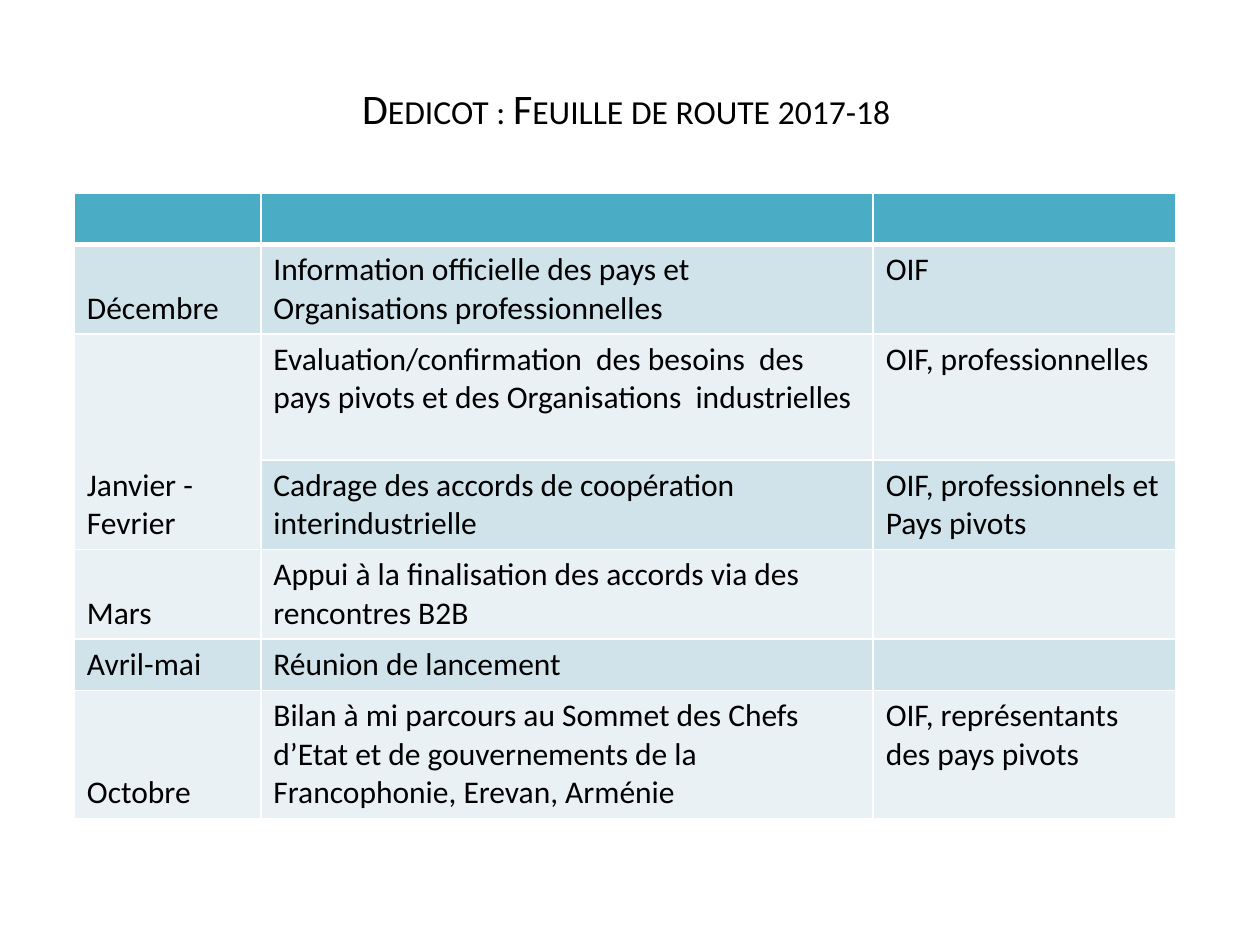
from pptx import Presentation
from pptx.dml.color import RGBColor
from pptx.enum.text import MSO_ANCHOR, PP_ALIGN
from pptx.oxml import parse_xml
from pptx.oxml.ns import nsdecls
from pptx.util import Inches, Pt

BLACK = RGBColor(0x00, 0x00, 0x00)
WHITE = RGBColor(0xFF, 0xFF, 0xFF)
TEAL = RGBColor(0x4B, 0xAC, 0xC6)
BAND_DARK = RGBColor(0xD0, 0xE3, 0xEA)
BAND_LIGHT = RGBColor(0xE9, 0xF1, 0xF5)
FONT = "Calibri"
BOTTOM, TOP = MSO_ANCHOR.BOTTOM, MSO_ANCHOR.TOP
CENTER = PP_ALIGN.CENTER

TITLE = "Dedicot : Feuille de route 2017-18"
COLUMN_WIDTHS = [1.48, 4.86, 2.4]
ROW_HEIGHTS = [0.41, 0.7, 1, 0.7, 0.7, 0.41, 1]
MERGED_ROWS = (2, 3)
ROADMAP = [
    ("", "", ""),
    ("Décembre", "Information officielle des pays et Organisations professionnelles", "OIF"),
    ("Janvier - Fevrier",
     "Evaluation/confirmation  des besoins  des pays pivots et des Organisations  industrielles",
     "OIF, professionnelles"),
    ("", "Cadrage des accords de coopération interindustrielle",
     "OIF, professionnels et Pays pivots"),
    ("Mars", "Appui à la finalisation des accords via des rencontres B2B", ""),
    ("Avril-mai", "Réunion de lancement", ""),
    ("Octobre",
     "Bilan à mi parcours au Sommet des Chefs d’Etat et de gouvernements de la "
     "Francophonie, Erevan, Arménie",
     "OIF, représentants des pays pivots"),
]


def style_font(font, size):
    font.name = FONT
    font.size = Pt(size)
    font.color.rgb = BLACK


def add_title(slide, left, top, width, height):
    box = slide.shapes.add_textbox(Inches(left), Inches(top), Inches(width), Inches(height))
    box.text_frame.word_wrap = True
    paragraph = box.text_frame.paragraphs[0]
    paragraph.alignment = CENTER
    paragraph.line_spacing = 0.9
    run = paragraph.add_run()
    run.text = TITLE
    style_font(run.font, 24)
    run.font._element.set("cap", "small")


def set_borders(cell, bottom_width):
    """Draw white lines on all sides; they must precede the fill in the cell properties."""
    properties = cell._tc.get_or_add_tcPr()
    widths = {"lnL": 1, "lnR": 1, "lnT": 1, "lnB": bottom_width}
    for index, (side, width) in enumerate(widths.items()):
        properties.insert(index, parse_xml(
            f'<a:{side} {nsdecls("a")} w="{Pt(width)}"><a:solidFill>'
            f'<a:srgbClr val="{WHITE}"/></a:solidFill></a:{side}>'))


def add_roadmap(slide, left, top):
    frame = slide.shapes.add_table(
        len(ROW_HEIGHTS), len(COLUMN_WIDTHS), Inches(left), Inches(top),
        Inches(sum(COLUMN_WIDTHS)), Inches(sum(ROW_HEIGHTS)))
    table = frame.table
    for column, width in zip(table.columns, COLUMN_WIDTHS):
        column.width = Inches(width)
    for row_index, (row, height, texts) in enumerate(zip(table.rows, ROW_HEIGHTS, ROADMAP)):
        row.height = Inches(height)
        is_header = row_index == 0
        band = BAND_DARK if row_index % 2 else BAND_LIGHT
        for column_index, (cell, text) in enumerate(zip(row.cells, texts)):
            cell.fill.solid()
            cell.fill.fore_color.rgb = TEAL if is_header else band
            set_borders(cell, 3 if is_header else 1)
            cell.vertical_anchor = TOP if column_index else BOTTOM
            cell.text = text
            style_font(cell.text_frame.paragraphs[0].font, 18)
    first, last = MERGED_ROWS
    table.cell(first, 0).merge(table.cell(last, 0))


def main():
    presentation = Presentation()
    presentation.slide_width = Inches(10)
    presentation.slide_height = Inches(7.5)
    slide = presentation.slides.add_slide(presentation.slide_layouts[6])
    add_roadmap(slide, 0.59, 1.53)
    add_title(slide, 0.37, 0.65, 9.2, 0.47)
    presentation.save("out.pptx")


if __name__ == "__main__":
    main()
